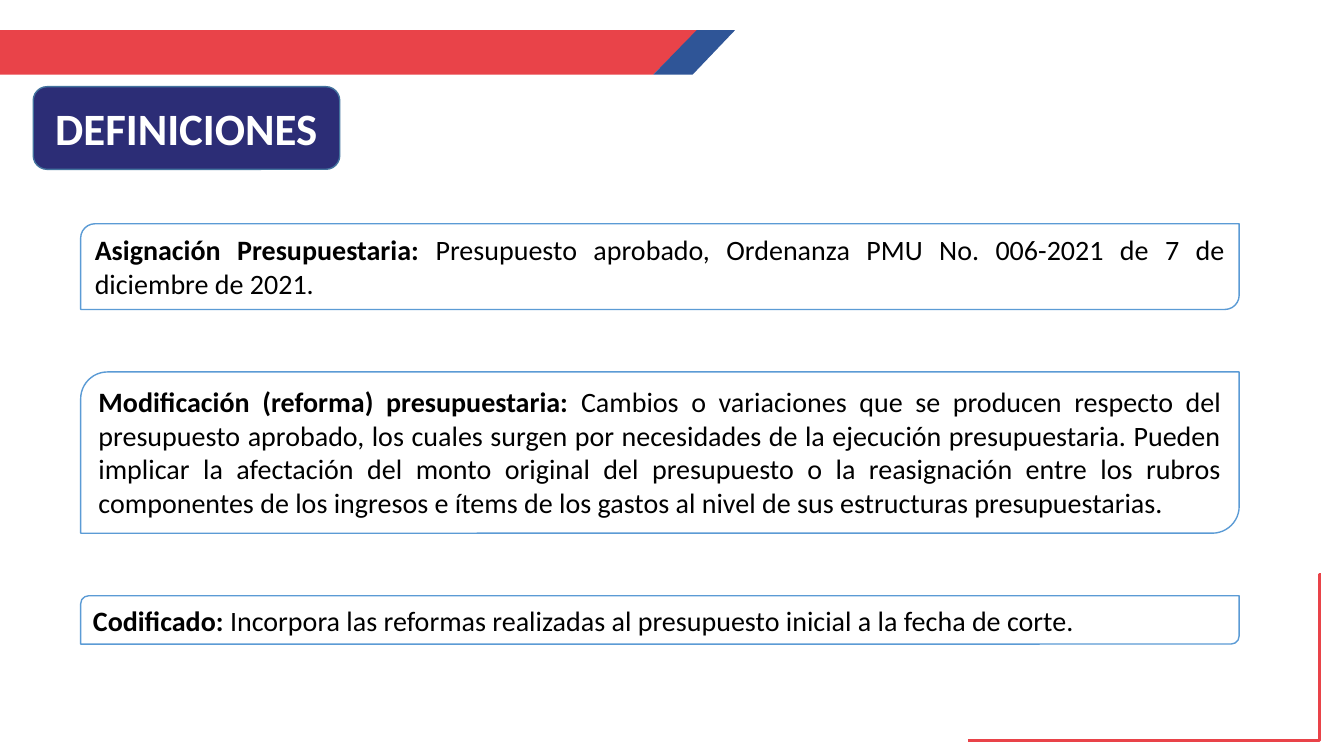
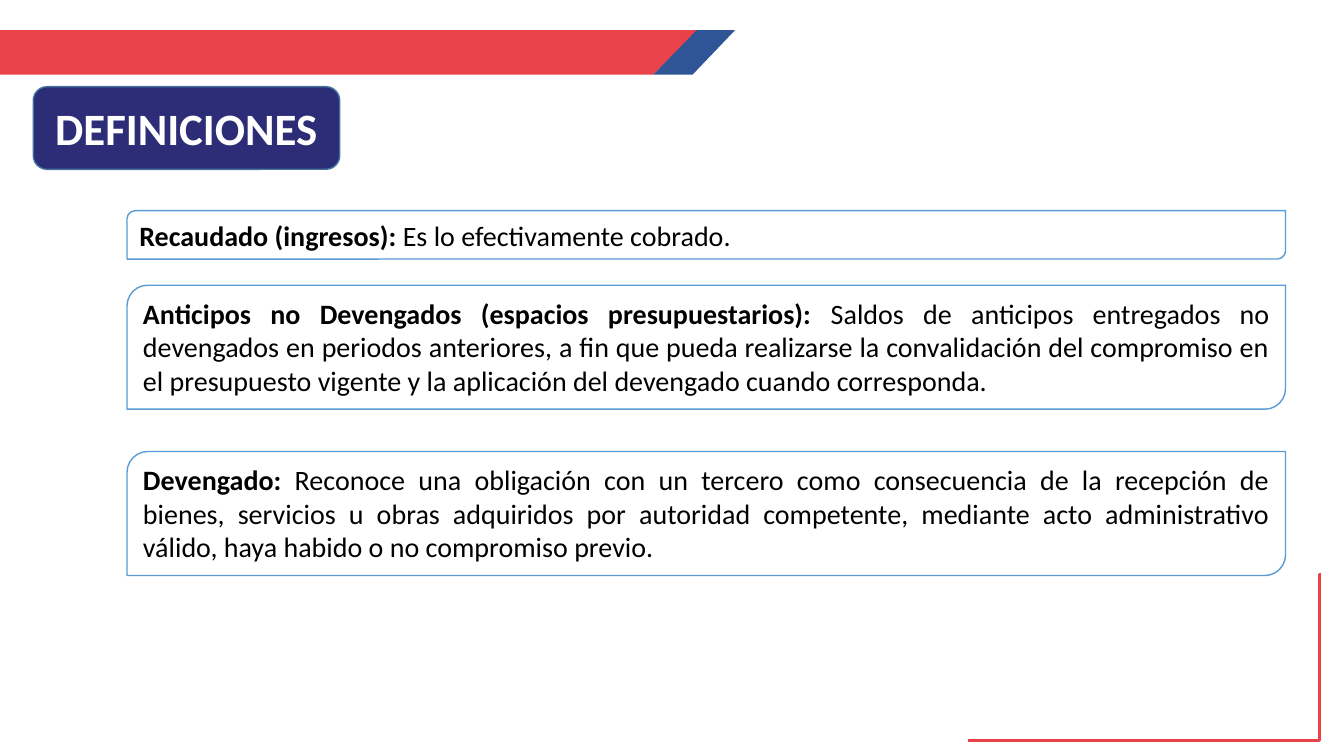
from lxml.etree import SubElement
from pptx import Presentation
from pptx.dml.color import RGBColor
from pptx.enum.shapes import MSO_CONNECTOR, MSO_SHAPE
from pptx.enum.text import MSO_ANCHOR, MSO_AUTO_SIZE, PP_ALIGN
from pptx.oxml.ns import qn
from pptx.util import Pt

PX = 9144
COLORS = {
    "red": "E94349",
    "blue": "2F5597",
    "navy": "2C2D76",
    "navy_edge": "43739E",
    "box_edge": "5B9BD5",
    "white": "FFFFFF",
    "black": "000000",
}
TITLE_FRAME = {"word_wrap": True, "vertical_anchor": MSO_ANCHOR.MIDDLE}
BOX_FRAME = {
    "word_wrap": True,
    "vertical_anchor": MSO_ANCHOR.TOP,
    "auto_size": MSO_AUTO_SIZE.SHAPE_TO_FIT_TEXT,
}
TITLE_FONT = {"name": "Calibri", "size": Pt(32), "bold": True}
TERM_FONT = {"name": "Calibri", "size": Pt(20), "bold": True}
MEANING_FONT = {**TERM_FONT, "bold": False}
BOX_WIDTH = 1149

DEFINITION_SLIDES = [
    (80, [
        (222, 2, "Asignación Presupuestaria: ",
         "Presupuesto aprobado, Ordenanza PMU No. 006-2021 de 7 de diciembre de 2021."),
        (369, 4, "Modificación (reforma) presupuestaria: ",
         "Cambios o variaciones que se producen respecto del presupuesto aprobado, "
         "los cuales surgen por necesidades de la ejecución presupuestaria. Pueden "
         "implicar la afectación del monto original del presupuesto o la reasignación "
         "entre los rubros componentes de los ingresos e ítems de los gastos al nivel "
         "de sus estructuras presupuestarias."),
        (591, 1, "Codificado: ",
         "Incorpora las reformas realizadas al presupuesto inicial a la fecha de corte."),
    ]),
    (126, [
        (209, 1, "Recaudado (ingresos): ", "Es lo efectivamente cobrado."),
        (283, 3, "Anticipos no Devengados (espacios presupuestarios): ",
         "Saldos de anticipos entregados no devengados en periodos anteriores, a fin "
         "que pueda realizarse la convalidación del compromiso en el presupuesto "
         "vigente y la aplicación del devengado cuando corresponda."),
        (448, 3, "Devengado: ",
         "Reconoce una obligación con un tercero como consecuencia de la recepción de "
         "bienes, servicios u obras adquiridos por autoridad competente, mediante acto "
         "administrativo válido, haya habido o no compromiso previo."),
    ]),
]


def apply(target, values):
    for name, value in values.items():
        setattr(target, name, value)


def color(name):
    return RGBColor.from_string(COLORS[name])


class Deck:
    def __init__(self):
        self.presentation = Presentation()
        apply(self.presentation, {"slide_width": 1333 * PX, "slide_height": 750 * PX})
        self.slide = None

    def new_slide(self, title):
        self.slide = self.presentation.slides.add_slide(self.presentation.slide_layouts[6])
        self.band([(0, 30), (692, 30), (648, 74), (0, 74)], "red")
        self.band([(691, 30), (729, 30), (687, 74), (648, 74)], "blue")
        self.corner()
        self.title(title)

    def paint(self, shape, fill, edge=None):
        shape.shadow.inherit = False
        shape.fill.solid()
        shape.fill.fore_color.rgb = color(fill)
        if edge:
            shape.line.color.rgb = color(edge)
            shape.line.width = Pt(1)
        else:
            shape.line.fill.background()

    def band(self, points, fill):
        outline = self.slide.shapes.build_freeform(*points[0], scale=PX)
        outline.add_line_segments(points[1:], close=True)
        self.paint(outline.convert_to_shape(), fill)

    def corner(self):
        corner = self.slide.shapes.add_connector(
            MSO_CONNECTOR.ELBOW, 960 * PX, 735 * PX, 1310 * PX, 570 * PX)
        corner.line.color.rgb = color("red")
        corner.line.width = Pt(2.25)
        properties = corner.element.spPr
        adjustments = properties.find(qn("a:prstGeom")).find(qn("a:avLst"))
        SubElement(adjustments, qn("a:gd"), name="adj1", fmla="val 99600")
        SubElement(properties, qn("a:effectLst"))

    def panel(self, kind, place, fill, edge, frame, align, runs):
        panel = self.slide.shapes.add_shape(kind, *(length * PX for length in place))
        self.paint(panel, fill, edge)
        apply(panel.text_frame, frame)
        paragraph = panel.text_frame.paragraphs[0]
        paragraph.alignment = align
        for text, font, ink in runs:
            run = paragraph.add_run()
            run.text = text
            apply(run.font, font)
            run.font.color.rgb = color(ink)

    def title(self, text):
        self.panel(MSO_SHAPE.FLOWCHART_ALTERNATE_PROCESS, (33, 86, 304, 82),
                   "navy", "navy_edge", TITLE_FRAME, PP_ALIGN.CENTER,
                   [(text, TITLE_FONT, "white")])

    def definition(self, left, top, lines, term, meaning):
        height = 48 + 75 * (lines - 1) // 2
        self.panel(MSO_SHAPE.ROUND_2_DIAG_RECTANGLE, (left, top, BOX_WIDTH, height),
                   "white", "box_edge", BOX_FRAME, PP_ALIGN.JUSTIFY,
                   [(term, TERM_FONT, "black"), (meaning, MEANING_FONT, "black")])


def main():
    deck = Deck()
    for left, definitions in DEFINITION_SLIDES:
        deck.new_slide("DEFINICIONES")
        for definition in definitions:
            deck.definition(left, *definition)
    deck.presentation.save("out.pptx")


if __name__ == "__main__":
    main()
